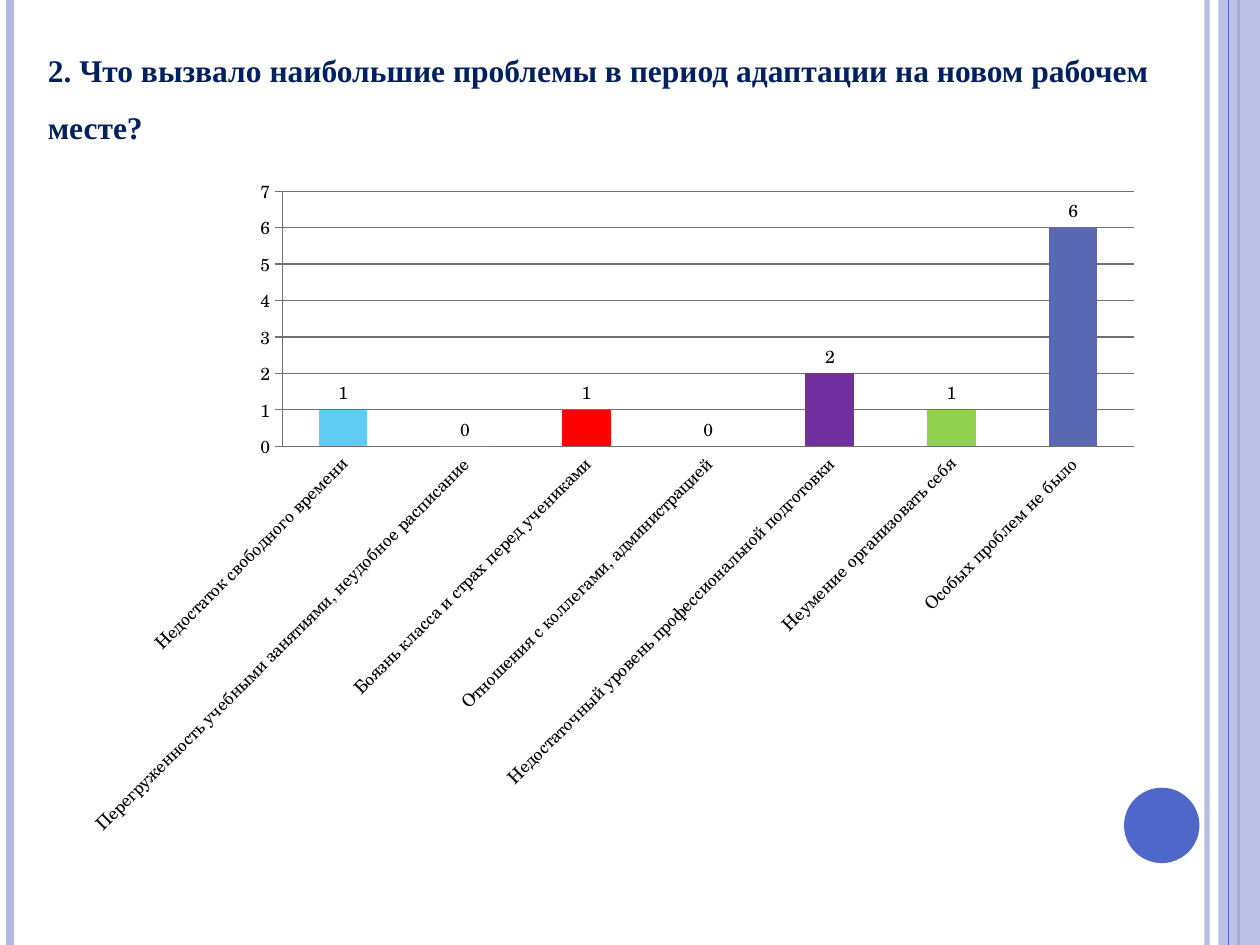
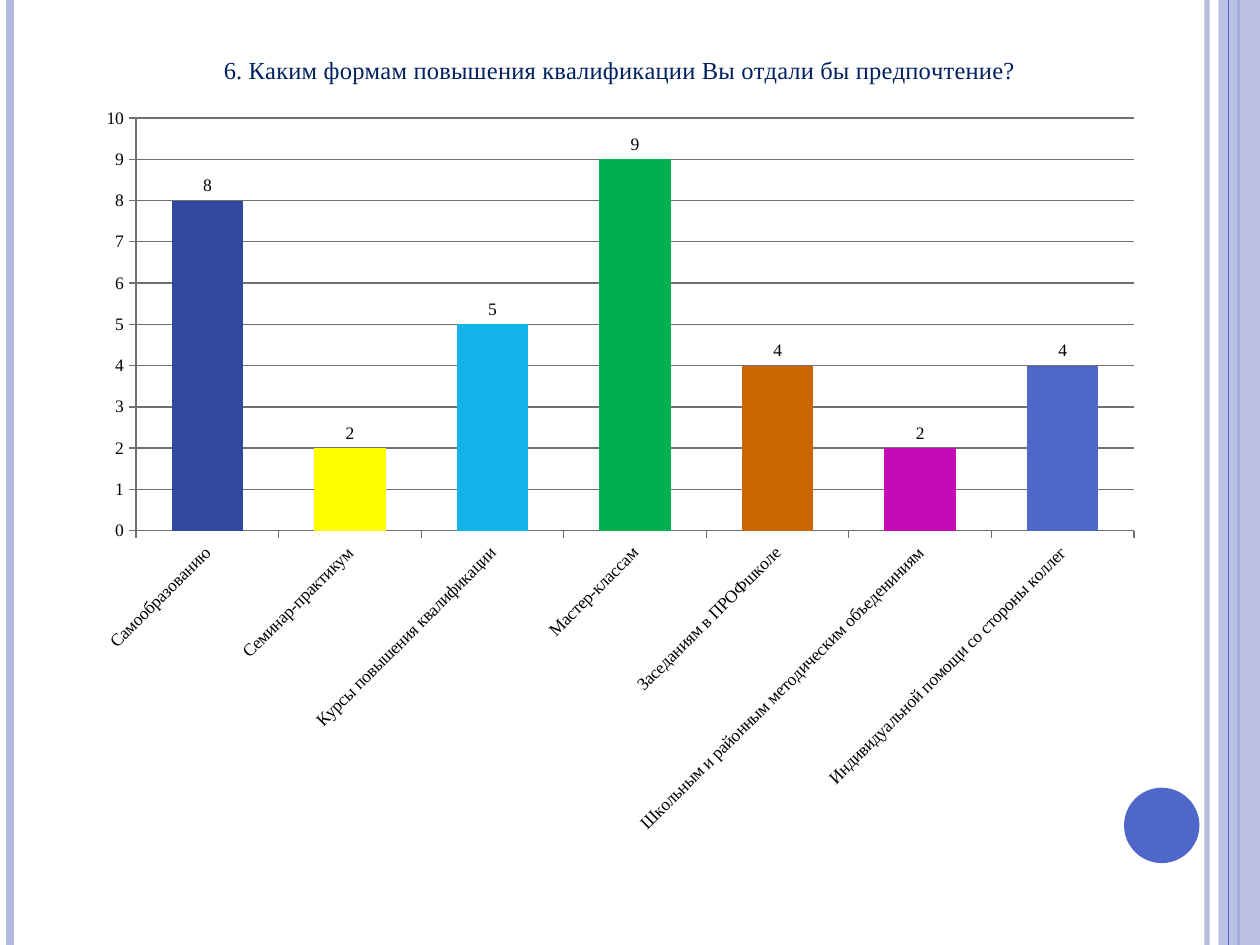
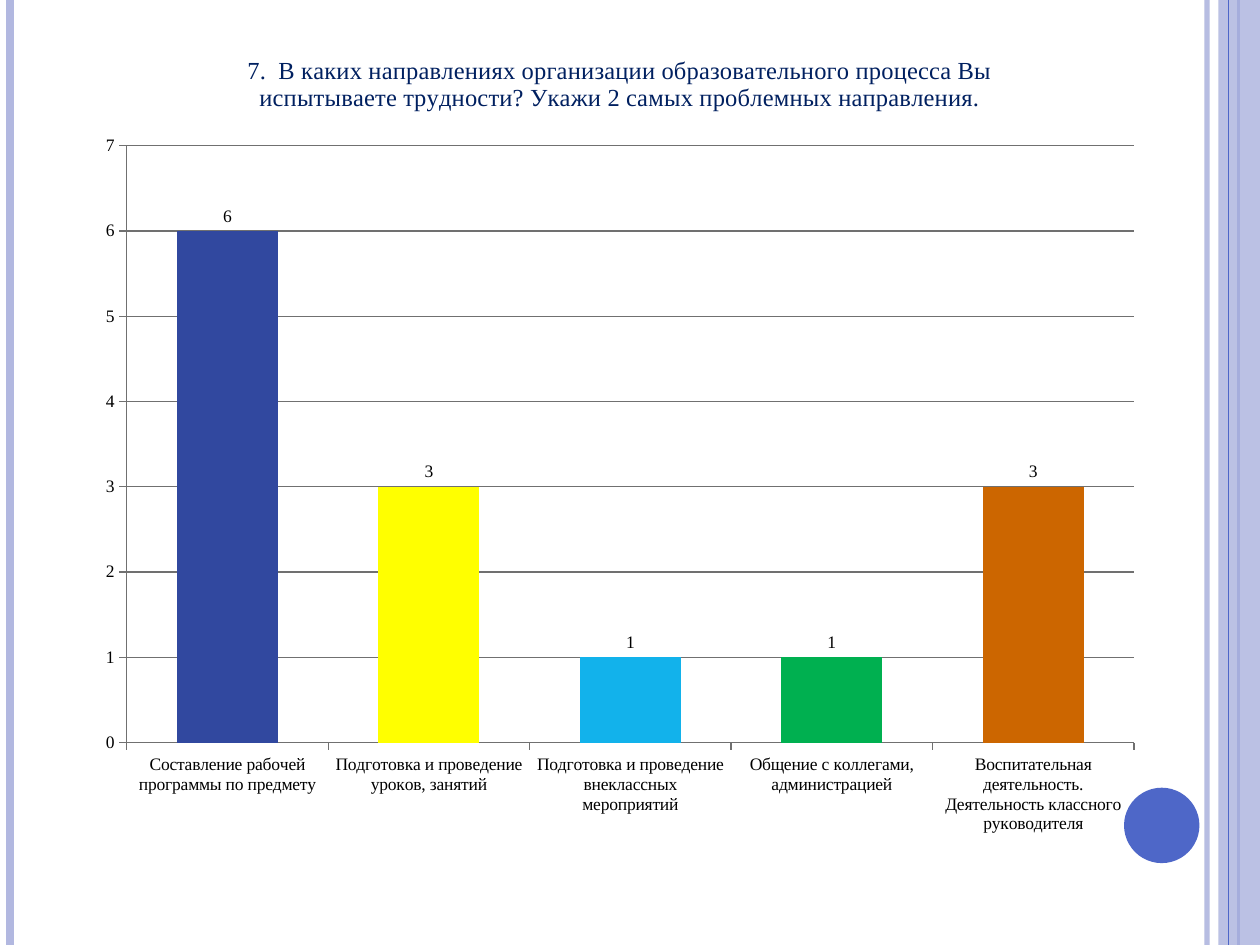
from pptx import Presentation, util as u
from pptx.chart.data import CategoryChartData
from pptx.dml.color import RGBColor
from pptx.enum import chart as ch, shapes, text
from pptx.oxml.ns import qn
from lxml import etree

Cm, Pt = u.Cm, u.Pt

# Shared style
COLORS = {
    "text": "000000", "title": "002060", "grid": "707070",
    "band": "B2B8E0", "accent": "4E67C8", "slate": "5968B0",
    "sky": "5ECCF3", "lime": "81D31A", "red": "FF0000", "purple": "7030A0",
    "leaf": "92D050", "navy": "31489F", "yellow": "FFFF00", "cyan": "12B2EB",
    "green": "00B050", "orange": "CC6600", "magenta": "C50BB8",
}
SERIF, BOOK = "Times New Roman", "TeX Gyre Schola"
WIDTH, HEIGHT = 25.4, 19.05
TITLE_BOX = (0.71, 0.53, 23.39, 3.96)
LOW_CHART, FULL_CHART = (1.3, 3.33, 22, 13.79), (1.7, 0.53, 21.59, 16.61)

# Vertical rules: x, colour, width in points, opacity in percent
RULES = [(24.33, "band", 3, 93), (0.2, "band", 4.5, 100), (24.97, "accent", 1.5, 100)]
TOP_RULE = (24.77, "accent", 0.75, 100)
BAND_BOX, DISC_BOX = (24.56, 0, 0.84, HEIGHT), (22.66, 15.88, 1.52, 1.52)

# Survey questions; each answer is category, votes, colour
QUESTIONS = [
    {
        "slide_title": "2. Что вызвало наибольшие проблемы в период адаптации на новом рабочем месте?",
        "box": LOW_CHART, "font": BOOK, "gap": 150, "top": 7, "tilt": True, "ticks": False,
        "answers": [
            ("Недостаток свободного времени", 1, "sky"),
            ("Перегруженность учебными занятиями, неудобное расписание", 0, "lime"),
            ("Боязнь класса и страх перед учениками", 1, "red"),
            ("Отношения с коллегами, администрацией", 0, "slate"),
            ("Недостаточный уровень профессиональной подготовки", 2, "purple"),
            ("Неумение организовать себя", 1, "leaf"),
            ("Особых проблем не было", 6, "slate"),
        ],
    },
    {
        "chart_title": "6. Каким формам повышения квалификации Вы отдали бы предпочтение?",
        "box": FULL_CHART, "font": SERIF, "gap": 100, "top": 10, "tilt": True, "ticks": True,
        "answers": [
            ("Самообразованию", 8, "navy"),
            ("Семинар-практикум", 2, "yellow"),
            ("Курсы повышения квалификации", 5, "cyan"),
            ("Мастер-классам", 9, "green"),
            ("Заседаниям в ПРОФшколе", 4, "orange"),
            ("Школьным и районным методическим объедениниям", 2, "magenta"),
            ("Индивидуальной помощи со стороны коллег", 4, "accent"),
        ],
    },
    {
        "chart_title": "7.  В каких направлениях организации образовательного процесса Вы "
                       "испытываете трудности? Укажи 2 самых проблемных направления.",
        "box": FULL_CHART, "font": SERIF, "gap": 100, "top": 7, "tilt": False, "ticks": True,
        "answers": [
            ("Составление рабочей программы по предмету", 6, "navy"),
            ("Подготовка и проведение уроков, занятий", 3, "yellow"),
            ("Подготовка и проведение внеклассных мероприятий", 1, "cyan"),
            ("Общение с коллегами, администрацией", 1, "green"),
            ("Воспитательная деятельность. Деятельность классного руководителя", 3, "orange"),
        ],
    },
]


def rgb(name):
    return RGBColor.from_string(COLORS[name])


def cm(box):
    return [Cm(v) for v in box]


def paint(fill, name):
    fill.solid()
    fill.fore_color.rgb = rgb(name)


def set_font(font, name, size, color, bold=False):
    font.name, font.size, font.bold = name, Pt(size), bold
    font.color.rgb = rgb(color)


def set_opacity(sp, percent):
    clr = sp.element.spPr.find(".//" + qn("a:srgbClr"))
    etree.SubElement(clr, qn("a:alpha"), val=str(percent * 1000))


def add_rule(slide, x, color, width, opacity):
    line = slide.shapes.add_connector(
        shapes.MSO_CONNECTOR.STRAIGHT, Cm(x), 0, Cm(x), Cm(HEIGHT))
    line.line.color.rgb = rgb(color)
    line.line.width = Pt(width)
    if opacity < 100:
        set_opacity(line, opacity)
    etree.SubElement(line.element.spPr, qn("a:effectLst"))
    return line


def add_solid(slide, kind, box, color):
    sp = slide.shapes.add_shape(kind, *cm(box))
    sp.shadow.inherit = False
    paint(sp.fill, color)
    sp.line.fill.background()
    return sp


def decorate_master(prs, slide):
    """Draw the side bands once and hand them to the slide master."""
    parts = [add_rule(slide, *rule) for rule in RULES]
    band = add_solid(slide, shapes.MSO_SHAPE.RECTANGLE, BAND_BOX, "band")
    set_opacity(band, 87)
    parts += [band, add_rule(slide, *TOP_RULE),
              add_solid(slide, shapes.MSO_SHAPE.OVAL, DISC_BOX, "accent")]
    tree = prs.slide_master.element.cSld.spTree
    for number, sp in enumerate(parts, 100):
        sp.element.xpath(".//p:cNvPr")[0].set("id", str(number))
        tree.append(sp.element)


def set_slide_title(slide, title):
    sp = slide.shapes.title
    sp.left, sp.top, sp.width, sp.height = cm(TITLE_BOX)
    tf = sp.text_frame
    tf.text = title
    tf.word_wrap = True
    tf.auto_size = text.MSO_AUTO_SIZE.NONE
    tf.vertical_anchor = text.MSO_ANCHOR.TOP
    p = tf.paragraphs[0]
    p.alignment = text.PP_ALIGN.LEFT
    p.line_spacing = 1.5
    set_font(p.font, SERIF, 18, "title", bold=True)


def add_votes_chart(slide, question):
    names, votes, colors = zip(*question["answers"])
    data = CategoryChartData()
    data.categories = names
    data.add_series("Series 1", votes)
    chart = slide.shapes.add_chart(
        ch.XL_CHART_TYPE.COLUMN_CLUSTERED, *cm(question["box"]), data).chart
    set_font(chart.font, question["font"], 10, "text")
    chart.has_legend = False

    # Chart title
    title = question.get("chart_title")
    chart.has_title = bool(title)
    if title:
        tf = chart.chart_title.text_frame
        tf.text = title
        set_font(tf.paragraphs[0].font, SERIF, 14, "title")
        chart.chart_title.include_in_layout = False

    # Columns
    plot = chart.plots[0]
    plot.gap_width = question["gap"]
    plot.vary_by_categories = False
    series = plot.series[0]
    series.invert_if_negative = False
    paint(series.format.fill, colors[-1])
    for i, color in enumerate(colors):
        if color != colors[-1]:
            paint(series.points[i].format.fill, color)
    plot.has_data_labels = True
    labels = plot.data_labels
    labels.show_value = True
    labels.position = ch.XL_LABEL_POSITION.OUTSIDE_END
    set_font(labels.font, question["font"], 10, "text")

    # Axes
    cat, val = chart.category_axis, chart.value_axis
    val.minimum_scale, val.maximum_scale, val.major_unit = 0, question["top"], 1
    val.has_major_gridlines = True
    for axis in (cat, val):
        axis.major_tick_mark = ch.XL_TICK_MARK.OUTSIDE
        set_font(axis.tick_labels.font, question["font"], 10, "text")
    for part in (cat, val, val.major_gridlines):
        part.format.line.color.rgb = rgb("grid")
        part.format.line.width = Pt(0.75)
    if not question["ticks"]:
        cat.major_tick_mark = ch.XL_TICK_MARK.NONE
    if question["tilt"]:
        body = chart.element.xpath(".//c:catAx/c:txPr/a:bodyPr")[0]
        body.set("rot", "-2700000")
        body.set("vert", "horz")


def main():
    prs = Presentation()
    prs.slide_width, prs.slide_height = Cm(WIDTH), Cm(HEIGHT)
    title_only, blank = prs.slide_layouts[5], prs.slide_layouts[6]
    for question in QUESTIONS:
        title = question.get("slide_title")
        slide = prs.slides.add_slide(title_only if title else blank)
        if title:
            set_slide_title(slide, title)
        add_votes_chart(slide, question)
    decorate_master(prs, prs.slides[0])
    prs.save("out.pptx")


if __name__ == "__main__":
    main()
